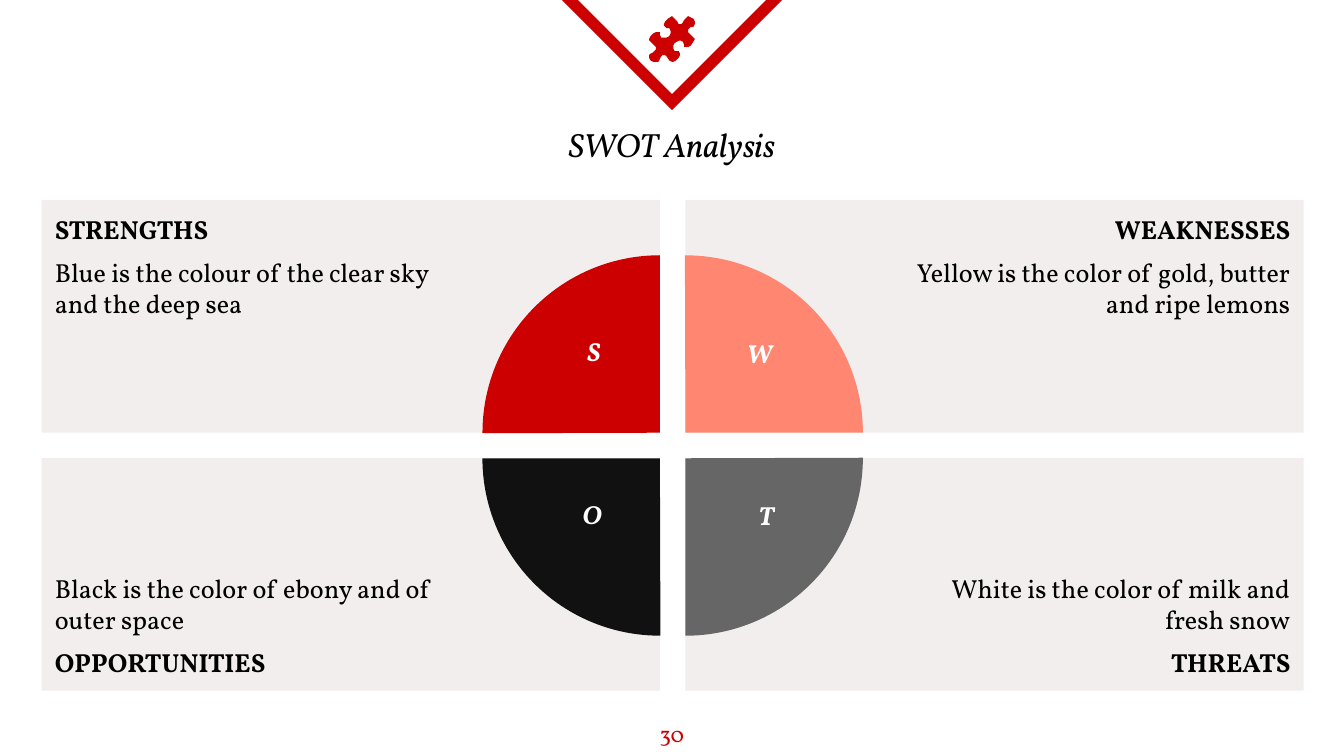
from dataclasses import dataclass

from lxml.etree import SubElement
from pptx import Presentation
from pptx.dml.color import RGBColor
from pptx.enum.shapes import MSO_SHAPE as Preset
from pptx.enum.text import MSO_ANCHOR as Anchor, MSO_AUTO_SIZE as AutoSize, PP_ALIGN as Align
from pptx.oxml.ns import qn
from pptx.shapes.autoshape import Shape
from pptx.slide import Slide
from pptx.text.text import TextFrame
from pptx.util import Inches, Pt

RED = RGBColor(0xCC, 0x00, 0x00)
CORAL = RGBColor(0xFF, 0x86, 0x71)
GRAY = RGBColor(0x66, 0x66, 0x66)
DARK = RGBColor(0x11, 0x11, 0x11)
PANEL = RGBColor(0xF3, 0xEE, 0xEE)
BLACK = RGBColor(0x00, 0x00, 0x00)
WHITE = RGBColor(0xFF, 0xFF, 0xFF)

FONT = "Vollkorn"
SLIDE_WIDTH = 10
SLIDE_HEIGHT = SLIDE_WIDTH * 9 / 16
PANEL_WIDTH, PANEL_HEIGHT = 4.6, 1.73
PANEL_LEFTS = (0.31, 5.1)
PANEL_TOPS = (1.49, 3.41)
INNER_X = (PANEL_LEFTS[0] + PANEL_WIDTH, PANEL_LEFTS[1])
INNER_Y = (PANEL_TOPS[0] + PANEL_HEIGHT, PANEL_TOPS[1])
PIE_SIZE = 2.64
INSET, WIDE_INSET = 0.1, 1.5

PUZZLE_OUTLINE = (
    (500, 12), (497, 14), (495, 16), (494, 18), (494, 19), (495, 20), (496, 21),
    (498, 21), (499, 23), (499, 25), (498, 27), (496, 28), (494, 28.5), (492, 28),
    (491, 26), (491, 24), (490, 24), (488, 24), (486, 25), (484, 27), (483, 29),
    (483, 30), (484, 31), (487, 34), (488, 35), (488.5, 36), (488, 37), (486, 39),
    (484, 39.5), (483, 41), (483, 43), (484, 45), (486, 46), (488, 46), (490, 45.5),
    (491, 44), (491.5, 42), (493, 41), (495, 41), (496, 42.5), (498, 45), (500, 46),
    (501, 46), (503, 45), (505, 43), (506, 41), (506, 39.5), (505, 38.5), (503, 38),
    (502, 37.5), (501, 36), (501, 34), (502, 32), (504, 31), (506, 30), (508, 31),
    (509, 33), (509, 35), (510, 35), (512, 35), (514, 34), (516, 31), (517, 29),
    (516, 27.5), (513, 25), (511.5, 23.5), (512, 22), (514, 20), (516, 19.5),
    (517, 18), (517, 16), (516, 14.5), (514, 13), (512, 12), (510, 13.5),
    (509, 15), (508.5, 17), (507, 18), (505, 18), (504, 16), (502, 13.5), (501, 13),
)


@dataclass(frozen=True)
class Box:
    left: float
    top: float
    width: float
    height: float

    def lengths(self) -> tuple[Inches, ...]:
        return tuple(Inches(v) for v in (self.left, self.top, self.width, self.height))


@dataclass(frozen=True)
class Quadrant:
    heading: str
    body: str
    letter: str
    letter_box: Box
    color: RGBColor
    column: int
    row: int
    rotation: int


QUADRANTS = (
    Quadrant("STRENGTHS", "Blue is the colour of the clear sky and the deep sea",
             "S", Box(4.2, 2.45, 0.44, 0.5), RED, 0, 0, 0),
    Quadrant("WEAKNESSES", "Yellow is the color of gold, butter and ripe lemons",
             "W", Box(5.31, 2.46, 0.68, 0.48), CORAL, 1, 0, 90),
    Quadrant("THREATS", "White is the color of milk and fresh snow",
             "T", Box(5.44, 3.67, 0.52, 0.58), GRAY, 1, 1, 180),
    Quadrant("OPPORTUNITIES", "Black is the color of ebony and of outer space",
             "O", Box(4.16, 3.66, 0.49, 0.5), DARK, 0, 1, 270),
)


def add_preset(slide: Slide, preset: Preset, box: Box, fill: RGBColor) -> Shape:
    shape = slide.shapes.add_shape(preset, *box.lengths())
    shape.shadow.inherit = False
    shape.fill.solid()
    shape.fill.fore_color.rgb = fill
    shape.line.fill.background()
    return shape


def set_frame(frame: TextFrame, anchor: Anchor, left: float = INSET,
              right: float = INSET, vertical: float = INSET) -> None:
    frame.word_wrap = True
    frame.auto_size = AutoSize.NONE
    frame.vertical_anchor = anchor
    frame.margin_left, frame.margin_right = Inches(left), Inches(right)
    frame.margin_top = frame.margin_bottom = Inches(vertical)


def write(frame: TextFrame, index: int, text: str, size: int, color: RGBColor, align: Align,
          bold: bool = False, italic: bool = False) -> None:
    paragraph = frame.paragraphs[0] if index == 0 else frame.add_paragraph()
    paragraph.alignment = align
    if index:
        paragraph.space_before = paragraph.space_after = Pt(6)
    run = paragraph.add_run()
    run.text = text
    font = run.font
    font.name, font.size, font.bold, font.italic = FONT, Pt(size), bold, italic
    font.color.rgb = color


def add_label(slide: Slide, text: str, box: Box, size: int, color: RGBColor,
              vertical: float, emphasis: bool) -> None:
    frame = slide.shapes.add_textbox(*box.lengths()).text_frame
    set_frame(frame, Anchor.TOP, vertical=vertical)
    write(frame, 0, text, size, color, Align.CENTER, bold=emphasis, italic=emphasis)


def add_panel(slide: Slide, quadrant: Quadrant) -> None:
    box = Box(PANEL_LEFTS[quadrant.column], PANEL_TOPS[quadrant.row], PANEL_WIDTH, PANEL_HEIGHT)
    frame = add_preset(slide, Preset.RECTANGLE, box, PANEL).text_frame
    on_right, on_bottom = quadrant.column == 1, quadrant.row == 1
    set_frame(frame, Anchor.BOTTOM if on_bottom else Anchor.TOP,
              left=WIDE_INSET if on_right else INSET,
              right=INSET if on_right else WIDE_INSET)
    lines = [(quadrant.heading, True), (quadrant.body, False)]
    if on_bottom:
        lines.reverse()
    for index, (text, bold) in enumerate(lines):
        write(frame, index, text, 14, BLACK, Align.RIGHT if on_right else Align.LEFT, bold)


def add_pie(slide: Slide, quadrant: Quadrant) -> None:
    box = Box(INNER_X[quadrant.column] - PIE_SIZE / 2, INNER_Y[quadrant.row] - PIE_SIZE / 2,
              PIE_SIZE, PIE_SIZE)
    pie = add_preset(slide, Preset.PIE, box, quadrant.color)
    pie.adjustments[0], pie.adjustments[1] = 107.89, 162
    pie.rotation = quadrant.rotation


def add_banner(slide: Slide) -> None:
    box = Box(4.18, -0.06, 1.64, 0.82)
    triangle = add_preset(slide, Preset.ISOSCELES_TRIANGLE, box, WHITE)
    triangle.fill.background()
    triangle.rotation = 180
    triangle.line.color.rgb = RED
    triangle.line.width = Pt(6)
    outline = triangle.element.spPr.find(qn("a:ln"))
    SubElement(outline, qn("a:miter"), lim="800000")


def add_puzzle(slide: Slide) -> None:
    builder = slide.shapes.build_freeform(*PUZZLE_OUTLINE[0], scale=Inches(0.01))
    builder.add_line_segments(PUZZLE_OUTLINE[1:], close=True)
    puzzle = builder.convert_to_shape()
    puzzle.shadow.inherit = False
    puzzle.fill.solid()
    puzzle.fill.fore_color.rgb = RED
    puzzle.line.fill.background()


def add_title(slide: Slide) -> None:
    title = slide.shapes.title
    title.left, title.top, title.width, title.height = Box(1.13, 0.82, 7.74, 0.59).lengths()
    set_frame(title.text_frame, Anchor.TOP)
    write(title.text_frame, 0, "SWOT Analysis", 18, BLACK, Align.CENTER, italic=True)


def main() -> None:
    presentation = Presentation()
    presentation.slide_width = Inches(SLIDE_WIDTH)
    presentation.slide_height = Inches(SLIDE_HEIGHT)
    slide = presentation.slides.add_slide(presentation.slide_layouts[5])
    add_banner(slide)
    add_title(slide)
    add_label(slide, "30", Box(0, 5.26, SLIDE_WIDTH, 0.36), 12, RED, INSET, False)
    for quadrant in QUADRANTS:
        add_panel(slide, quadrant)
    for quadrant in QUADRANTS:
        add_pie(slide, quadrant)
    for quadrant in QUADRANTS:
        add_label(slide, quadrant.letter, quadrant.letter_box, 14, WHITE, 0.05, True)
    add_puzzle(slide)
    presentation.save("out.pptx")


if __name__ == "__main__":
    main()
